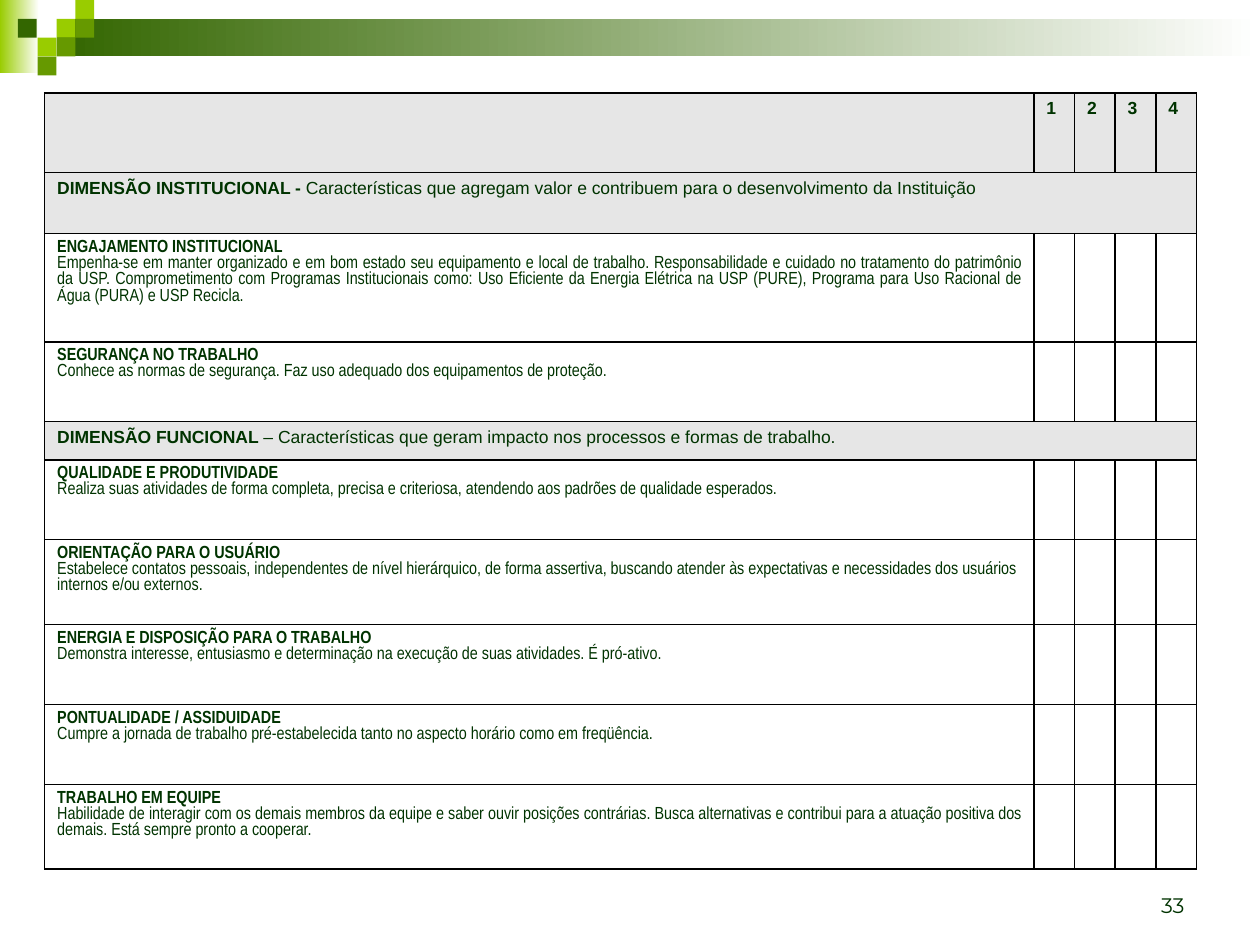
from dataclasses import dataclass

import lxml.etree
import pptx
import pptx.dml.color
import pptx.enum.shapes
import pptx.enum.text
import pptx.oxml.ns
import pptx.util

Cm, Pt = pptx.util.Cm, pptx.util.Pt
qn = pptx.oxml.ns.qn
ALIGN = pptx.enum.text.PP_ALIGN


@dataclass(frozen=True)
class Theme:
    text: str = "003300"
    dark: str = "336600"
    mid: str = "669900"
    lime: str = "99CC00"
    white: str = "FFFFFF"
    grey: str = "E6E6E6"
    border: str = "000000"
    body_size: float = 10
    number_size: float = 12
    border_width: float = 1
    font: str = "Arial"
    narrow: str = "Arial Narrow"
    number_font: str = "Montserrat"


@dataclass(frozen=True)
class Square:
    left: float
    top: float
    color: str


@dataclass(frozen=True)
class Row:
    height: float
    title: str
    text: str
    section: bool = False
    justify: bool = False


T = Theme()
STEP = 0.38  # side of one decorative square, cm
SCORES = ["1", "2", "3", "4"]
HEADER_HEIGHT = 1.61
TEXT_WIDTH, SCORE_WIDTH = 19.94, 0.82

SQUARES = [
    Square(3 * STEP, STEP, T.lime),
    Square(4 * STEP, 0, T.lime),
    Square(4 * STEP, STEP, T.mid),
    Square(2 * STEP, 2 * STEP, T.lime),
    Square(0.36, STEP, T.dark),
    Square(3 * STEP, 2 * STEP, T.mid),
    Square(2 * STEP, 3 * STEP, T.mid),
]

ROWS = [
    Row(1.23, "DIMENSÃO INSTITUCIONAL - ",
        "Características que agregam valor e contribuem para o desenvolvimento da Instituição",
        section=True),
    Row(2.18, "ENGAJAMENTO INSTITUCIONAL",
        "Empenha-se em manter organizado e em bom estado seu equipamento e local de trabalho. "
        "Responsabilidade e cuidado no tratamento do patrimônio da USP. Comprometimento com "
        "Programas Institucionais como: Uso Eficiente da Energia Elétrica na USP (PURE), "
        "Programa para Uso Racional de Água (PURA) e USP Recicla.", justify=True),
    Row(1.61, "SEGURANÇA NO TRABALHO",
        "Conhece as normas de segurança. Faz uso adequado dos equipamentos de proteção."),
    Row(0.77, "DIMENSÃO FUNCIONAL",
        " – Características que geram impacto nos processos e formas de trabalho.",
        section=True),
    Row(1.61, "QUALIDADE E PRODUTIVIDADE",
        "Realiza suas atividades de forma completa, precisa e criteriosa, atendendo aos "
        "padrões de qualidade esperados.", justify=True),
    Row(1.71, "ORIENTAÇÃO PARA O USUÁRIO",
        "Estabelece contatos pessoais, independentes de nível hierárquico, de forma assertiva, "
        "buscando atender às expectativas e necessidades dos usuários internos e/ou externos."),
    Row(1.61, "ENERGIA E DISPOSIÇÃO PARA O TRABALHO",
        "Demonstra interesse, entusiasmo e determinação na execução de suas atividades. "
        "É pró-ativo."),
    Row(1.61, "PONTUALIDADE / ASSIDUIDADE",
        "Cumpre a jornada de trabalho pré-estabelecida tanto no aspecto horário como em "
        "freqüência."),
    Row(1.71, "TRABALHO EM EQUIPE",
        "Habilidade de interagir com os demais membros da equipe e saber ouvir posições "
        "contrárias. Busca alternativas e contribui para a atuação positiva dos demais. "
        "Está sempre pronto a cooperar.", justify=True),
]


def rgb(color: str):
    return pptx.dml.color.RGBColor.from_string(color)


def add_text(p, text: str, *, font: str = T.font, size: float = T.body_size,
             bold: bool = False, align=None) -> None:
    """Append a formatted run to a paragraph."""
    r = p.add_run()
    r.text = text
    r.font.name, r.font.size, r.font.bold = font, Pt(size), bold
    r.font.color.rgb = rgb(T.text)
    if align is not None:
        p.alignment = align


def add_rect(s, left: float, top: float, width: float, height: float,
             color: str, fade: bool = False) -> None:
    """Draw a plain rectangle, optionally fading to white on the right."""
    sp = s.shapes.add_shape(pptx.enum.shapes.MSO_SHAPE.RECTANGLE,
                            Cm(left), Cm(top), Cm(width), Cm(height))
    sp.shadow.inherit = False
    sp.line.fill.background()
    if fade:
        sp.fill.gradient()
        sp.fill.gradient_angle = 0
        for stop, stop_color in zip(sp.fill.gradient_stops, (color, T.white)):
            stop.color.rgb = rgb(stop_color)
    else:
        sp.fill.solid()
        sp.fill.fore_color.rgb = rgb(color)


def format_cell(cell, fill: str) -> None:
    """Give a cell its four borders, its fill and a small empty line."""
    tc_pr = cell._tc.get_or_add_tcPr()
    for side in ("a:lnL", "a:lnR", "a:lnT", "a:lnB"):
        ln = lxml.etree.SubElement(tc_pr, qn(side), w=str(Pt(T.border_width)))
        solid = lxml.etree.SubElement(ln, qn("a:solidFill"))
        lxml.etree.SubElement(solid, qn("a:srgbClr"), val=T.border)
    cell.fill.solid()
    cell.fill.fore_color.rgb = rgb(fill)
    p = cell.text_frame.paragraphs[0]
    lxml.etree.SubElement(p._p, qn("a:endParaRPr"), sz=str(int(T.body_size * 100)))


def fill_row(table, index: int, row: Row) -> None:
    """Write one section heading or one criterion."""
    table.rows[index].height = Cm(row.height)
    cell = table.cell(index, 0)
    tf = cell.text_frame
    p = tf.paragraphs[0]
    if row.section:
        cell.merge(table.cell(index, len(SCORES)))
        add_text(p, row.title, bold=True)
        add_text(p, row.text)
    else:
        align = ALIGN.JUSTIFY if row.justify else ALIGN.LEFT
        add_text(p, row.title, font=T.narrow, bold=True, align=align)
        add_text(tf.add_paragraph(), row.text, font=T.narrow, align=align)


def add_score_table(s) -> None:
    width = TEXT_WIDTH + SCORE_WIDTH * len(SCORES)
    height = HEADER_HEIGHT + sum(row.height for row in ROWS)
    table = s.shapes.add_table(len(ROWS) + 1, len(SCORES) + 1,
                               Cm(0.9), Cm(1.87), Cm(width), Cm(height)).table
    table.first_row = table.horz_banding = False
    for i, column in enumerate(table.columns):
        column.width = Cm(SCORE_WIDTH if i else TEXT_WIDTH)
    shaded = [True] + [row.section for row in ROWS]
    for i, is_shaded in enumerate(shaded):
        for j in range(len(SCORES) + 1):
            format_cell(table.cell(i, j), T.grey if is_shaded else T.white)

    # Header row
    table.rows[0].height = Cm(HEADER_HEIGHT)
    for j, score in enumerate(SCORES, 1):
        add_text(table.cell(0, j).text_frame.paragraphs[0], score, bold=True)

    # Sections and criteria
    for i, row in enumerate(ROWS, 1):
        fill_row(table, i, row)


def main() -> None:
    prs = pptx.Presentation()
    prs.slide_width, prs.slide_height = Cm(25.4), Cm(19.05)
    s = prs.slides.add_slide(prs.slide_layouts[6])

    # Top band
    add_rect(s, 0, 0, 0.79, 1.47, T.lime, fade=True)
    add_rect(s, 3 * STEP, STEP, 25.4 - 3 * STEP, 2 * STEP, T.dark, fade=True)
    for square in SQUARES:
        add_rect(s, square.left, square.top, STEP, STEP, square.color)

    # Page number
    tf = s.shapes.add_textbox(Cm(18.21), Cm(17.35), Cm(5.92), Cm(1.27)).text_frame
    tf.word_wrap = True
    tf.vertical_anchor = pptx.enum.text.MSO_ANCHOR.BOTTOM
    add_text(tf.paragraphs[0], "33", font=T.number_font, size=T.number_size,
             align=ALIGN.RIGHT)

    add_score_table(s)
    prs.save("out.pptx")


if __name__ == "__main__":
    main()
